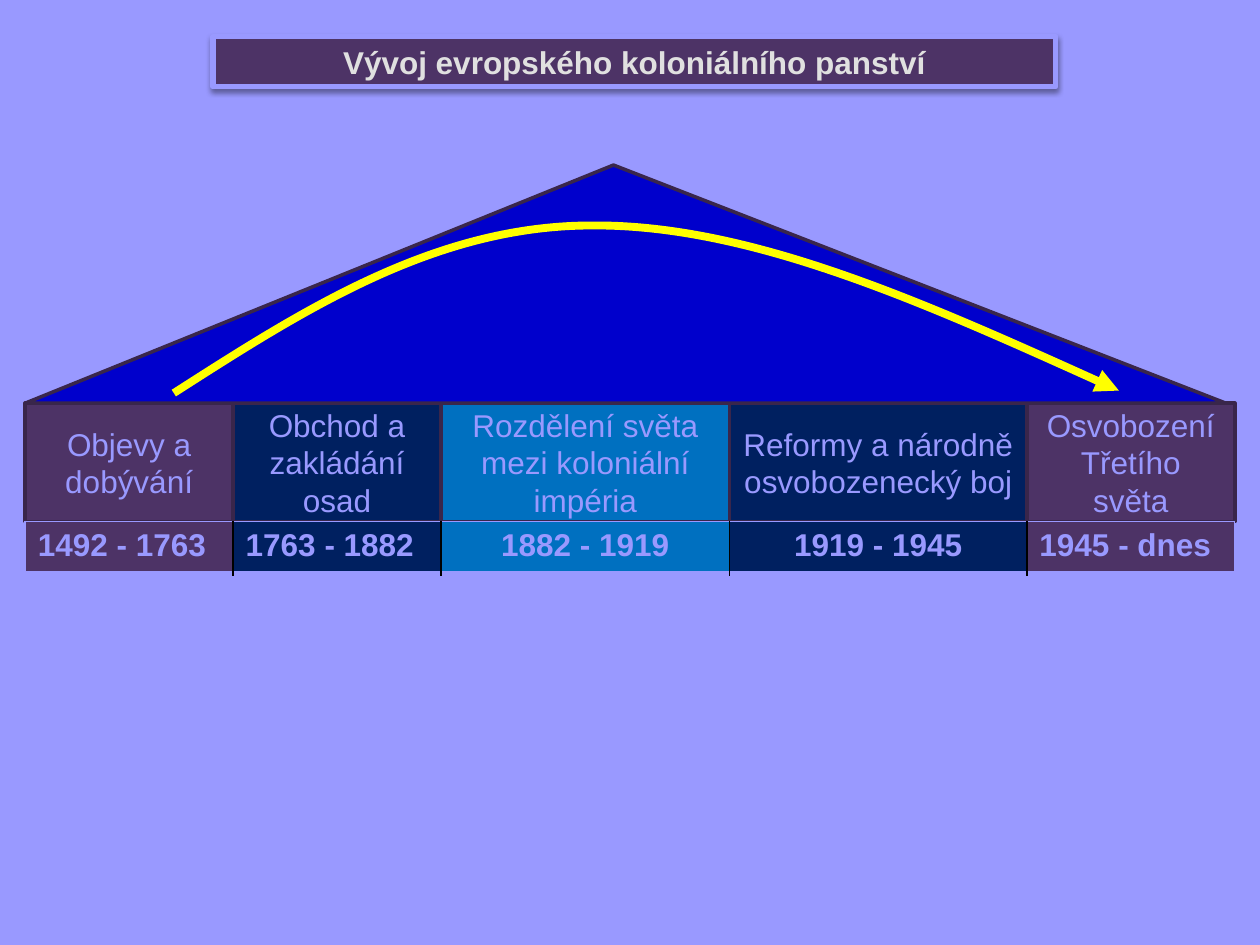
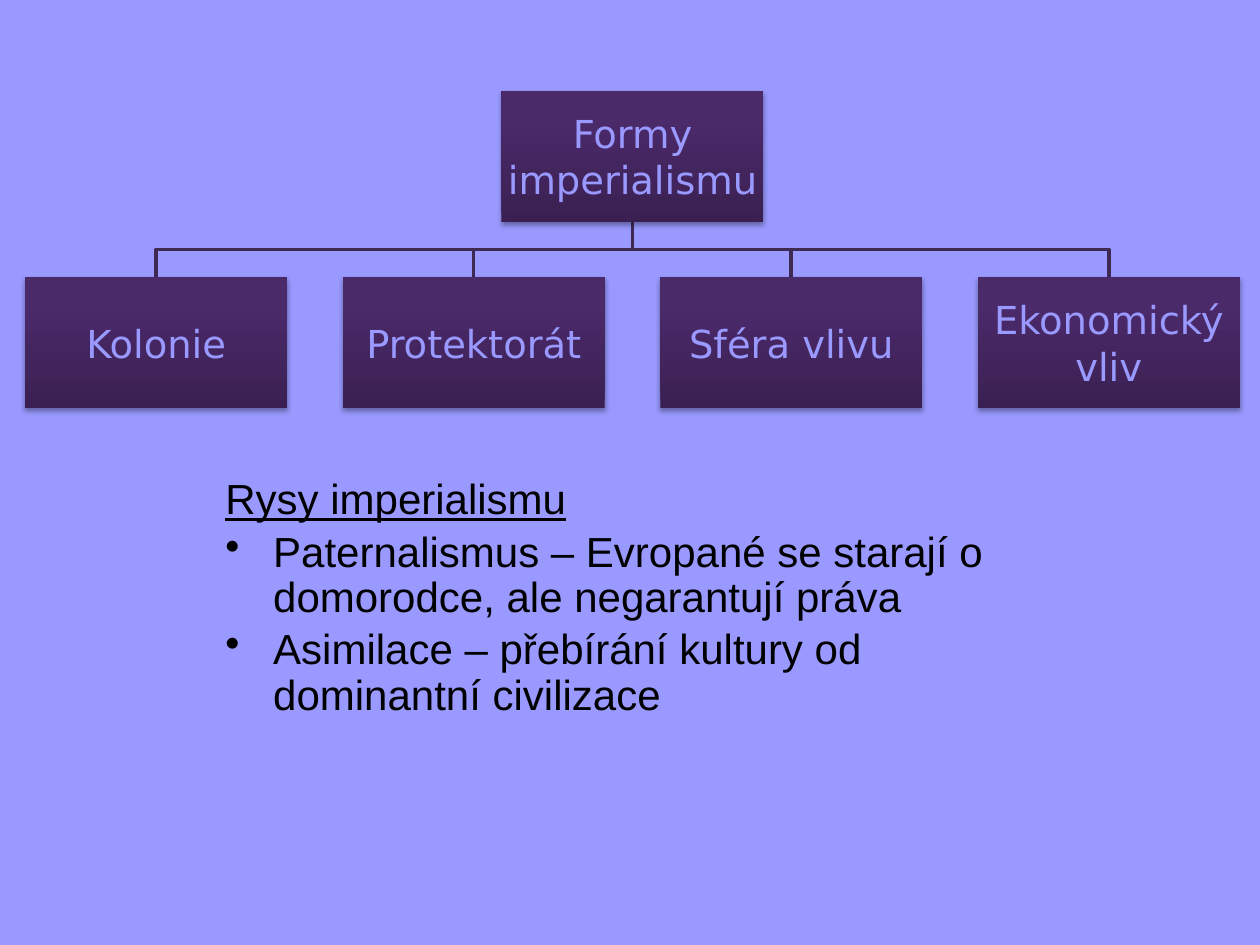
from copy import deepcopy

from lxml import etree
from pptx import Presentation
from pptx.dml.color import RGBColor
from pptx.enum import shapes, text
from pptx.oxml import ns
from pptx.util import Inches, Pt

LILAC = RGBColor(0x99, 0x99, 0xFF)
PLUM = RGBColor(0x4D, 0x33, 0x66)
EDGE = RGBColor(0x39, 0x26, 0x4B)
LINK = RGBColor(0x3E, 0x29, 0x52)
NAVY = RGBColor(0x00, 0x20, 0x60)
SKY = RGBColor(0x00, 0x70, 0xC0)
BLUE = RGBColor(0x00, 0x00, 0xCC)
YELLOW = RGBColor(0xFF, 0xFF, 0x00)
PALE = RGBColor(0xE0, 0xE0, 0xE0)
BLACK = RGBColor(0, 0, 0)
BOX_GRAD = [(0, RGBColor(0x3A, 0x20, 0x52)), (0.8, RGBColor(0x4B, 0x2A, 0x6A)),
            (1, RGBColor(0x4B, 0x29, 0x6C))]

SANS, TREE = "Arial", "DejaVu Sans"
LEFT, CENTER = text.PP_ALIGN.LEFT, text.PP_ALIGN.CENTER
RECT = shapes.MSO_SHAPE.RECTANGLE

TITLE = "Vývoj evropského koloniálního panství"
# name, years, width, fill, alignment of the years
ERAS = [
    ("Objevy a dobývání", "1492 - 1763", 1.65, PLUM, LEFT),
    ("Obchod a zakládání osad", "1763 - 1882", 1.65, NAVY, LEFT),
    ("Rozdělení světa mezi koloniální impéria", "1882 - 1919", 2.29, SKY, CENTER),
    ("Reformy a národně osvobozenecký boj", "1919 - 1945", 2.36, NAVY, CENTER),
    ("Osvobození\nTřetího světa", "1945 - dnes", 1.65, PLUM, LEFT),
]
ERA_X, ERA_Y, ERA_H, YEAR_H = 0.2, 3.2, 0.94, 0.41
# start point, then the control and end points of two Bézier arcs
ARC = [(1.38, 3.12), (2.41, 2.46), (3.45, 1.79), (4.7, 1.79),
       (5.95, 1.78), (7.42, 2.44), (8.88, 3.1)]

ROOT = "Formy imperialismu"
FORMS = ["Kolonie", "Protektorát", "Sféra vlivu", "Ekonomický vliv"]
BOX_W, BOX_H, STEP = 2.08, 1.04, 2.52
FORM_X, ROOT_Y, FORM_Y = 0.2, 0.72, 2.2
TRAITS = [
    "Rysy imperialismu",
    "Paternalismus – Evropané se starají o domorodce, ale negarantují práva",
    "Asimilace – přebírání kultury od dominantní civilizace",
]


def sub(parent, tag, **attrs):
    return etree.SubElement(parent, ns.qn(tag), attrs)


def tint(parent, color):
    return sub(parent, "a:srgbClr", val=str(color))


def write(frame, words, size, color, font=SANS, bold=False, align=CENTER):
    frame.text = words
    frame.word_wrap = True
    for para in frame.paragraphs:
        para.alignment = align
        for run in para.runs:
            run.font.size, run.font.name = Pt(size), font
            run.font.bold, run.font.color.rgb = bold, color


def stroke(shape, color, width):
    shape.line.color.rgb = color
    shape.line.width = Pt(width)


def add(slide, kind, box, fill=None, edge=None, width=2):
    shape = slide.shapes.add_shape(kind, *map(Inches, box))
    shape.shadow.inherit = False
    if fill is not None:
        shape.fill.solid()
        shape.fill.fore_color.rgb = fill
    if edge is None:
        shape.line.fill.background()
    else:
        stroke(shape, edge, width)
    return shape


def trace(slide, points, color, width):
    """Draw an open, unfilled outline through the points."""
    spots = [(Inches(x), Inches(y)) for x, y in points]
    form = slide.shapes.build_freeform(*spots[0])
    form.add_line_segments(spots[1:], close=False)
    shape = form.convert_to_shape()
    shape.shadow.inherit = False
    shape.fill.background()
    stroke(shape, color, width)
    return shape


def bend(shape):
    """Turn each three straight segments into one Bézier arc."""
    route = next(shape._element.iter(ns.qn("a:path")))
    lines = route.findall(ns.qn("a:lnTo"))
    for i in range(0, len(lines), 3):
        arc = sub(route, "a:cubicBezTo")
        for line in lines[i:i + 3]:
            arc.append(line[0])
            route.remove(line)


def shade(shape, alpha, drop):
    """Add a soft shadow below the shape."""
    effects = shape._element.spPr.find(ns.qn("a:effectLst"))
    cast = sub(effects, "a:outerShdw", blurRad=str(Pt(3.1)), dist=str(Pt(drop)),
               dir="5400000", algn="ctr", rotWithShape="0")
    sub(tint(cast, BLACK), "a:alpha", val=str(alpha * 1000))


def blend(shape):
    shape.fill.gradient()
    shape.fill.gradient_angle = 90
    stops = next(shape._element.iter(ns.qn("a:gsLst")))
    stops.append(deepcopy(stops[-1]))
    for stop, (spot, color) in zip(shape.fill.gradient_stops, BOX_GRAD):
        stop.position, stop.color.rgb = spot, color


def rule(cell, sides):
    """Set cell borders; they go before the cell fill."""
    props = cell._tc.get_or_add_tcPr()
    for i, (side, color, width) in enumerate(sides):
        line = sub(props, "a:ln" + side, w=str(Pt(width)))
        tint(sub(line, "a:solidFill"), color)
        props.insert(i, line)


def new_slide(deck):
    slide = deck.slides.add_slide(deck.slide_layouts[6])
    slide.background.fill.solid()
    slide.background.fill.fore_color.rgb = LILAC
    return slide


def add_years(slide):
    total = sum(era[2] for era in ERAS)
    frame = slide.shapes.add_table(1, len(ERAS), Inches(ERA_X), Inches(ERA_Y + ERA_H),
                                   Inches(total), Inches(YEAR_H))
    table = frame.table
    table.first_row = table.horz_banding = False
    last = len(ERAS) - 1
    for i, (_, years, width, fill, align) in enumerate(ERAS):
        table.columns[i].width = Inches(width)
        cell = table.cell(0, i)
        write(cell.text_frame, years, 18, LILAC, bold=True, align=align)
        cell.fill.solid()
        cell.fill.fore_color.rgb = fill
        rule(cell, [("L", LILAC if i == 0 else BLACK, 1),
                    ("R", LILAC if i == last else BLACK, 1),
                    ("T", LILAC, 1), ("B", LILAC, 3)])


def draw_eras(slide):
    head = add(slide, RECT, (1.69, 0.29, 6.69, 0.4), PLUM, LILAC, 3)
    shade(head, 38, 1.6)
    write(head.text_frame, TITLE, 18, PALE, bold=True)
    head.text_frame.vertical_anchor = text.MSO_ANCHOR.TOP
    head.text_frame.auto_size = text.MSO_AUTO_SIZE.SHAPE_TO_FIT_TEXT

    x = ERA_X
    for name, _, width, fill, _ in ERAS:
        box = add(slide, RECT, (x, ERA_Y, width, ERA_H), fill, EDGE)
        write(box.text_frame, name, 18, LILAC)
        x += width

    roof = add(slide, shapes.MSO_SHAPE.ISOSCELES_TRIANGLE,
               (ERA_X, 1.31, 9.53, 1.89), BLUE, EDGE)
    roof.adjustments[0] = 0.49
    add_years(slide)

    arrow = trace(slide, ARC, YELLOW, 4.5)
    bend(arrow)
    sub(arrow.line._get_or_add_ln(), "a:tailEnd", type="triangle")


def add_box(slide, x, y, words):
    box = add(slide, RECT, (x, y, BOX_W, BOX_H))
    blend(box)
    shade(box, 35, 1.8)
    frame = box.text_frame
    frame.margin_left = frame.margin_right = Inches(0.02)
    frame.margin_top = frame.margin_bottom = Inches(0.02)
    write(frame, words, 22, LILAC, TREE)


def draw_forms(slide):
    frame = slide.shapes.add_textbox(*map(Inches, (1.69, 3.75, 6.62, 3.66))).text_frame
    write(frame, "\n".join(TRAITS), 24, BLACK, align=LEFT)
    for i, para in enumerate(frame.paragraphs):
        props = para._p.get_or_add_pPr()
        props.set("marL", str(Inches(0.38)))
        props.set("indent", str(-Inches(0.38)))
        if i:
            tint(sub(props, "a:buClr"), BLACK)
            sub(props, "a:buChar", char="•")
            para.space_before = Pt(4)
        else:
            para.runs[0].font.underline = True
        para.line_spacing = 0.9

    lefts = [FORM_X + i * STEP for i in range(len(FORMS))]
    root_x = (lefts[0] + lefts[-1]) / 2
    mid = root_x + BOX_W / 2
    foot = ROOT_Y + BOX_H
    bar = (foot + FORM_Y) / 2
    for left in reversed(lefts):
        end = left + BOX_W / 2
        trace(slide, [(mid, foot), (mid, bar), (end, bar), (end, FORM_Y)], LINK, 2)
    add_box(slide, root_x, ROOT_Y, ROOT)
    for left, name in zip(lefts, FORMS):
        add_box(slide, left, FORM_Y, name)


def main():
    deck = Presentation()
    deck.slide_width, deck.slide_height = Inches(10), Inches(7.5)
    for draw in (draw_eras, draw_forms):
        draw(new_slide(deck))
    deck.save("out.pptx")


if __name__ == "__main__":
    main()
